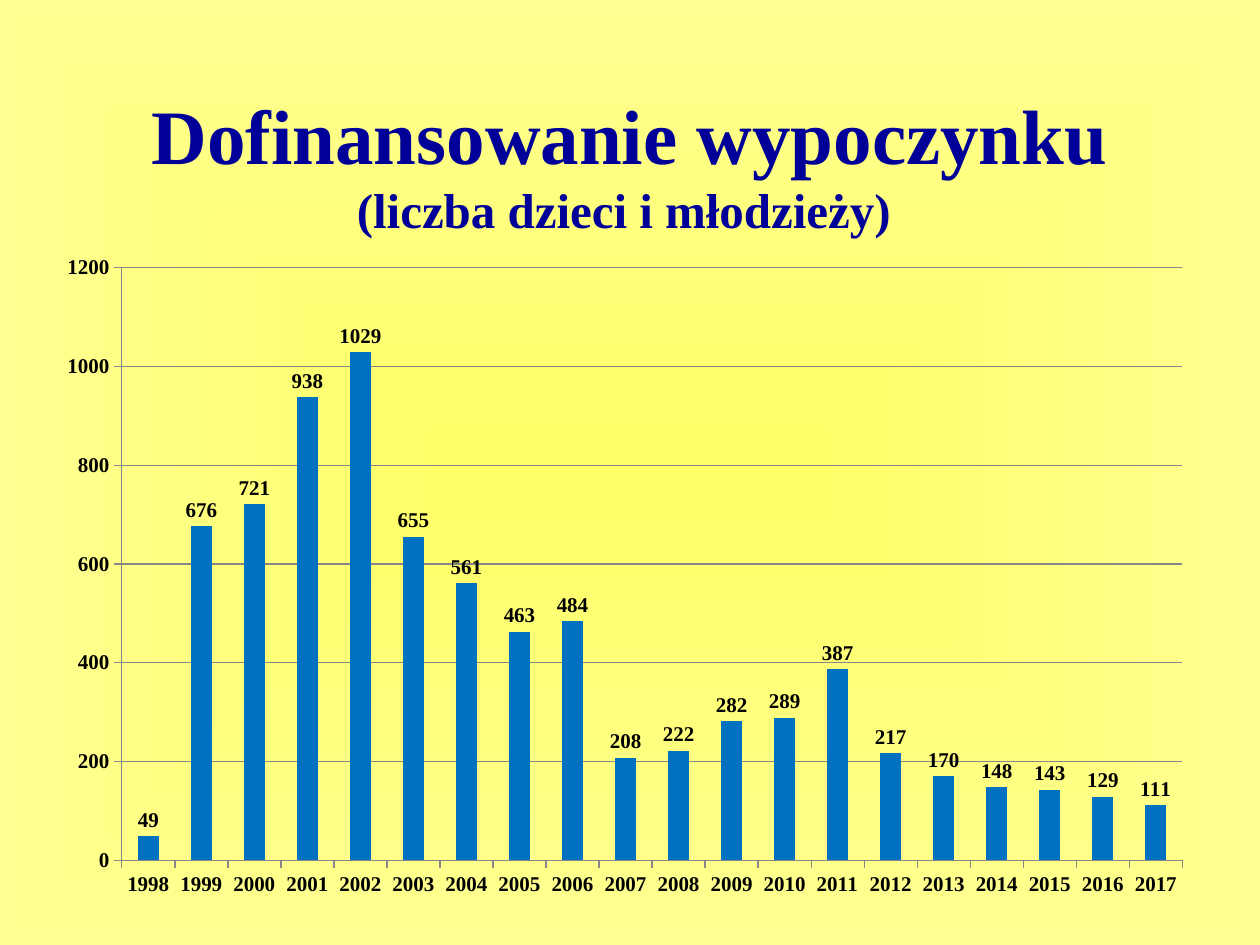
from dataclasses import dataclass

from pptx import Presentation
from pptx.chart.data import CategoryChartData
from pptx.dml.color import RGBColor
from pptx.enum.chart import XL_CHART_TYPE, XL_LABEL_POSITION, XL_TICK_MARK
from pptx.enum.text import MSO_ANCHOR, MSO_AUTO_SIZE, PP_ALIGN
from pptx.oxml import parse_xml
from pptx.oxml.ns import nsdecls, qn
from pptx.util import Inches, Pt


@dataclass(frozen=True)
class Theme:
    font: str = "Times New Roman"
    center: RGBColor = RGBColor(0xFF, 0xFF, 0x66)
    edge: RGBColor = RGBColor(0xFF, 0xFF, 0x92)
    title: RGBColor = RGBColor(0x00, 0x00, 0x99)
    text: RGBColor = RGBColor(0x00, 0x00, 0x00)
    bar: RGBColor = RGBColor(0x00, 0x70, 0xC0)
    line: RGBColor = RGBColor(0x87, 0x87, 0x87)
    title_size: Pt = Pt(44)
    subtitle_size: Pt = Pt(28)
    chart_size: Pt = Pt(12)


THEME = Theme()
FIRST_YEAR = 1998
CHILDREN = [49, 676, 721, 938, 1029, 655, 561, 463, 484, 208,
            222, 282, 289, 387, 217, 170, 148, 143, 129, 111]


def style_font(font, size, color):
    font.name = THEME.font
    font.size = size
    font.bold = True
    font.color.rgb = color


def set_background(slide):
    fill = slide.background.fill
    fill.gradient()
    for stop, color in zip(fill.gradient_stops, (THEME.center, THEME.edge)):
        stop.color.rgb = color
    # Spread the gradient from the slide centre instead of along a line
    gradient = slide.element.find(".//" + qn("a:gradFill"))
    gradient.replace(gradient.find(qn("a:lin")), parse_xml(
        f'<a:path {nsdecls("a")} path="shape">'
        '<a:fillToRect l="50000" t="50000" r="50000" b="50000"/></a:path>'))


def add_title(slide, heading, subtitle):
    shape = slide.shapes.title
    shape.left, shape.top = Inches(0.75), Inches(0.67)
    shape.width, shape.height = Inches(8.5), Inches(1.25)
    frame = shape.text_frame
    frame.auto_size = MSO_AUTO_SIZE.NONE
    frame.vertical_anchor = MSO_ANCHOR.MIDDLE
    paragraph = frame.paragraphs[0]
    paragraph.alignment = PP_ALIGN.CENTER
    run = paragraph.add_run()
    run.text = heading
    style_font(run.font, THEME.title_size, THEME.title)
    paragraph.add_line_break()
    run = paragraph.add_run()
    run.text = subtitle
    style_font(run.font, THEME.subtitle_size, THEME.title)


def style_line(line):
    line.color.rgb = THEME.line
    line.width = Pt(0.75)


def style_axis(axis):
    axis.major_tick_mark = XL_TICK_MARK.OUTSIDE
    axis.minor_tick_mark = XL_TICK_MARK.NONE
    style_line(axis.format.line)
    style_font(axis.tick_labels.font, THEME.chart_size, THEME.text)


def place_plot(chart, **place):
    plot_area = chart.element.find(".//" + qn("c:plotArea"))
    for layout in plot_area.findall(qn("c:layout")):
        plot_area.remove(layout)
    sizes = "".join(f'<c:{key} val="{value}"/>' for key, value in place.items())
    plot_area.insert(0, parse_xml(
        f'<c:layout {nsdecls("c")}><c:manualLayout><c:layoutTarget val="inner"/>'
        f'<c:xMode val="edge"/><c:yMode val="edge"/>{sizes}'
        '</c:manualLayout></c:layout>'))


def add_column_chart(slide):
    data = CategoryChartData()
    data.categories = [str(FIRST_YEAR + index) for index in range(len(CHILDREN))]
    data.add_series("Series 1", CHILDREN)
    chart = slide.shapes.add_chart(
        XL_CHART_TYPE.COLUMN_CLUSTERED, Inches(0.35), Inches(1.94),
        Inches(9.21), Inches(5.28), data).chart
    chart.has_legend = False
    chart.has_title = False
    chart.font.name = THEME.font
    place_plot(chart, x=0.067, y=0.035, w=0.914, h=0.891)

    # Axes and gridlines
    style_axis(chart.category_axis)
    value_axis = chart.value_axis
    style_axis(value_axis)
    value_axis.minimum_scale, value_axis.maximum_scale = 0, 1200
    value_axis.major_unit = 200
    value_axis.has_major_gridlines = True
    style_line(value_axis.major_gridlines.format.line)

    # Columns and their values
    plot = chart.plots[0]
    plot.gap_width = 150
    plot.vary_by_categories = False
    fill = plot.series[0].format.fill
    fill.solid()
    fill.fore_color.rgb = THEME.bar
    plot.has_data_labels = True
    labels = plot.data_labels
    labels.show_value = True
    labels.position = XL_LABEL_POSITION.OUTSIDE_END
    style_font(labels.font, THEME.chart_size, THEME.text)


def main():
    presentation = Presentation()
    presentation.slide_width, presentation.slide_height = Inches(10), Inches(7.5)
    slide = presentation.slides.add_slide(
        presentation.slide_layouts.get_by_name("Title Only"))
    set_background(slide)
    add_title(slide, "Dofinansowanie wypoczynku", "(liczba dzieci i młodzieży) ")
    add_column_chart(slide)
    presentation.save("out.pptx")


if __name__ == "__main__":
    main()
